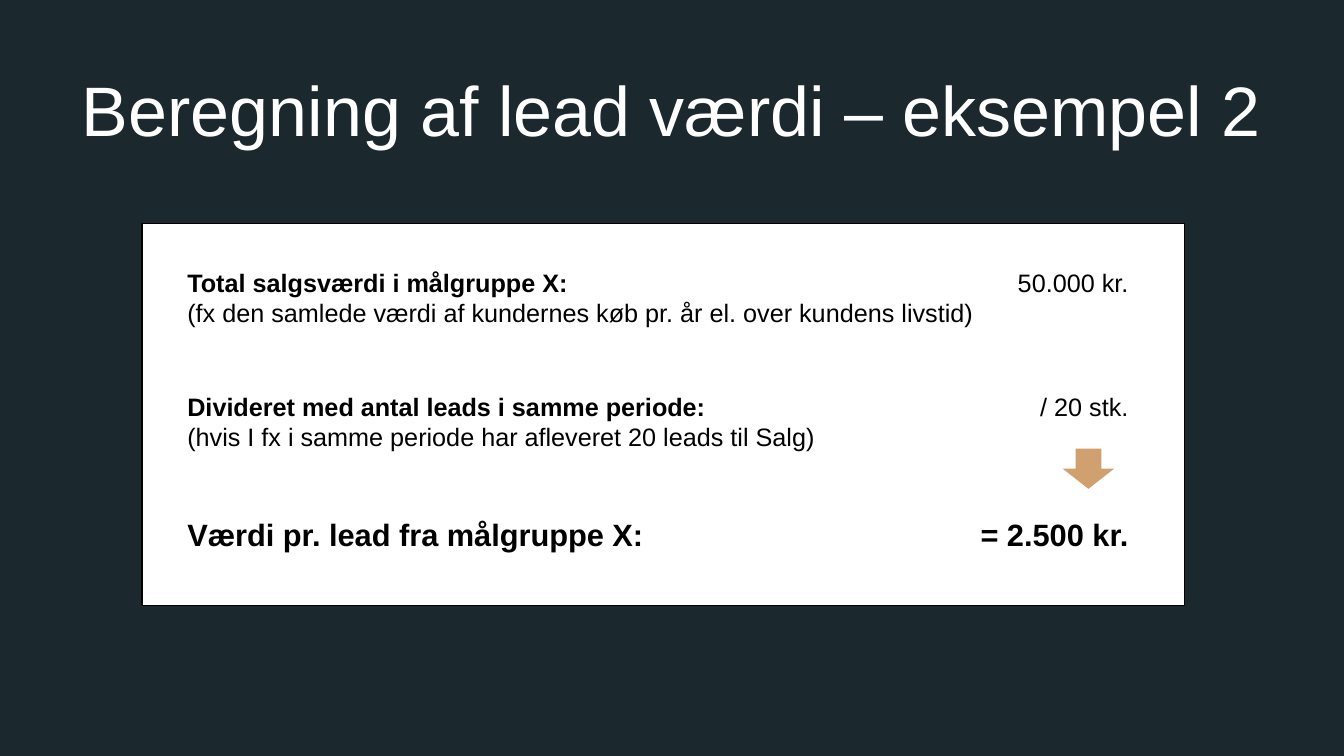
from dataclasses import dataclass

from pptx import Presentation
from pptx import util as u
from pptx.dml.color import RGBColor
from pptx.enum import shapes, text


@dataclass(frozen=True)
class Theme:
    font: str = "Arial"
    back: str = "1B282E"
    white: str = "FFFFFF"
    black: str = "000000"
    accent: str = "D0A06F"
    head: int = 50
    body: int = 18
    total: int = 22


T = Theme()
WIDE, HIGH = 13.33, 7.5
LEFT, RIGHT = 1.76, 11.29  # outer edges of the label and value columns
TOP, PITCH = 2.6, 1.235  # first row and distance between rows

# Label, note, label width, value, value width, type size
ROWS = [
    ("Total salgsværdi i målgruppe X:",
     "(fx den samlede værdi af kundernes køb pr. år el. over kundens livstid)",
     9.28, "50.000 kr.", 1.49, T.body),
    ("Divideret med antal leads i samme periode:",
     "(hvis I fx i samme periode har afleveret 20 leads til Salg)",
     8.13, "/ 20 stk.", 1.49, T.body),
    ("Værdi pr. lead fra målgruppe X:", "",
     6.64, "= 2.500 kr.", 2.1, T.total),
]


def box(*sides):
    return [u.Inches(side) for side in sides]


def paint(fill, color):
    fill.solid()
    fill.fore_color.rgb = RGBColor.from_string(color)


def style(run, size, color, bold=False):
    font = run.font
    font.name, font.size, font.bold = T.font, u.Pt(size), bold
    font.color.rgb = RGBColor.from_string(color)


def add_title(slide, words):
    title = slide.shapes.title
    title.left, title.top, title.width, title.height = box(0, 0.4, WIDE, 1.45)
    frame = title.text_frame
    frame.text = words
    frame.vertical_anchor = text.MSO_ANCHOR.MIDDLE
    para = frame.paragraphs[0]
    para.alignment = text.PP_ALIGN.CENTER
    para.line_spacing = 0.9
    style(para.runs[0], T.head, T.white)


def add_shape(slide, kind, sides, fill, line=None):
    shape = slide.shapes.add_shape(kind, *box(*sides))
    shape.shadow.inherit = False
    paint(shape.fill, fill)
    if line:
        paint(shape.line.fill, line)
        shape.line.width = u.Pt(1)
    else:
        shape.line.fill.background()


def add_text(slide, sides, lines, size, bolds, align):
    frame = slide.shapes.add_textbox(*box(*sides)).text_frame
    frame.word_wrap = True
    para = frame.paragraphs[0]
    para.text = "\v".join(lines)
    para.alignment = align
    for run, bold in zip(para.runs, bolds):
        style(run, size, T.black, bold)


def add_row(slide, index, label, note, span, value, room, size):
    top = TOP + index * PITCH
    total = size == T.total
    line = 0.47 if total else 0.4
    lines = [label, note] if note else [label]
    add_text(slide, (LEFT, top, span, 0.71 if note else line), lines,
             size, (True, False), text.PP_ALIGN.LEFT)
    add_text(slide, (RIGHT - room, top, room, line), [value],
             size, (total,), text.PP_ALIGN.RIGHT)


def main():
    deck = Presentation()
    deck.slide_width, deck.slide_height = box(WIDE, HIGH)
    slide = deck.slides.add_slide(deck.slide_layouts[5])
    paint(slide.background.fill, T.back)
    add_title(slide, "Beregning af lead værdi – eksempel 2")

    # White panel with the calculation
    kinds = shapes.MSO_SHAPE
    add_shape(slide, kinds.RECTANGLE, (1.41, 2.22, 10.34, 3.79),
              T.white, T.black)
    for index, row in enumerate(ROWS):
        add_row(slide, index, *row)

    # Arrow down to the result
    add_shape(slide, kinds.DOWN_ARROW, (10.54, 4.45, 0.51, 0.4), T.accent)
    deck.save("out.pptx")


if __name__ == "__main__":
    main()
